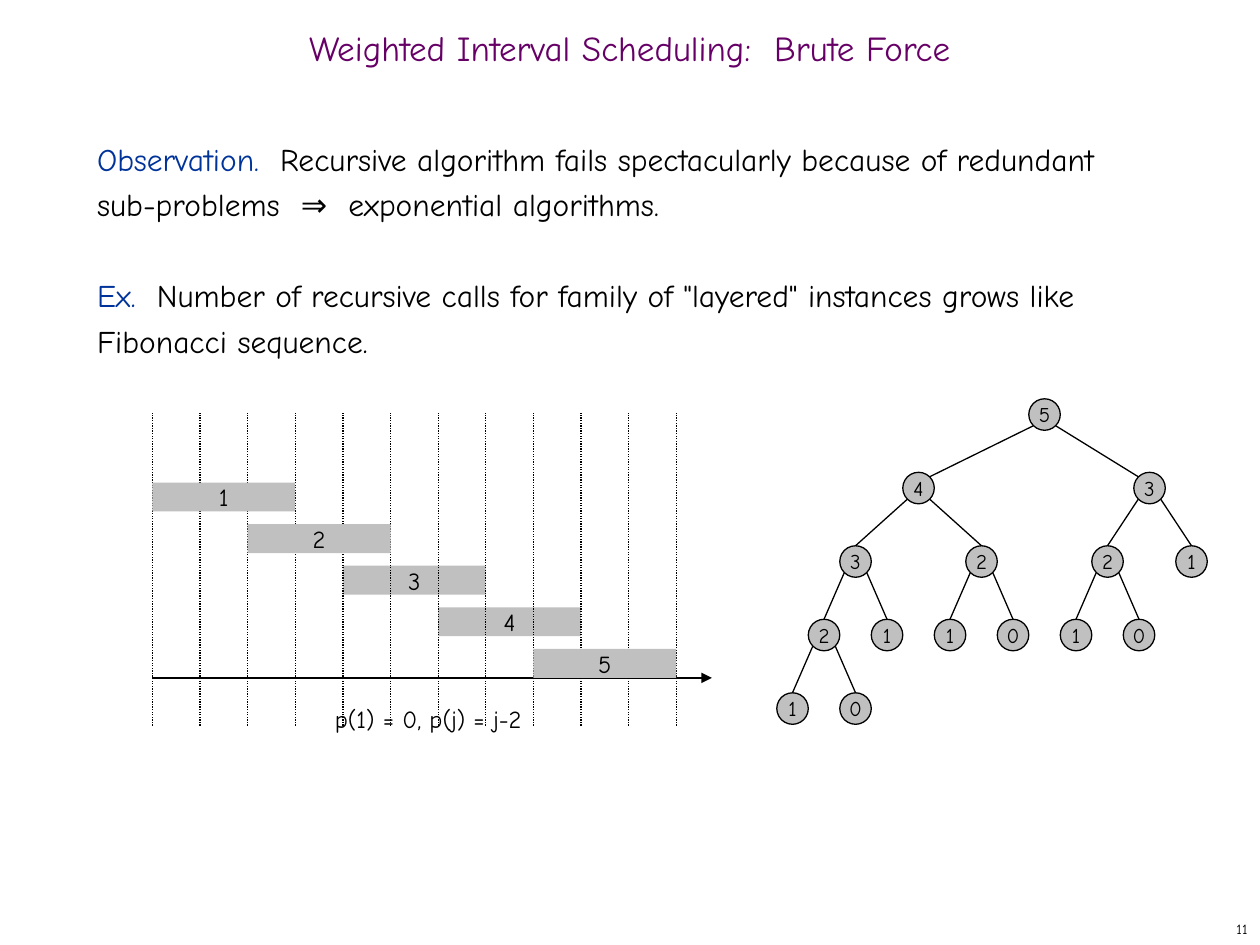
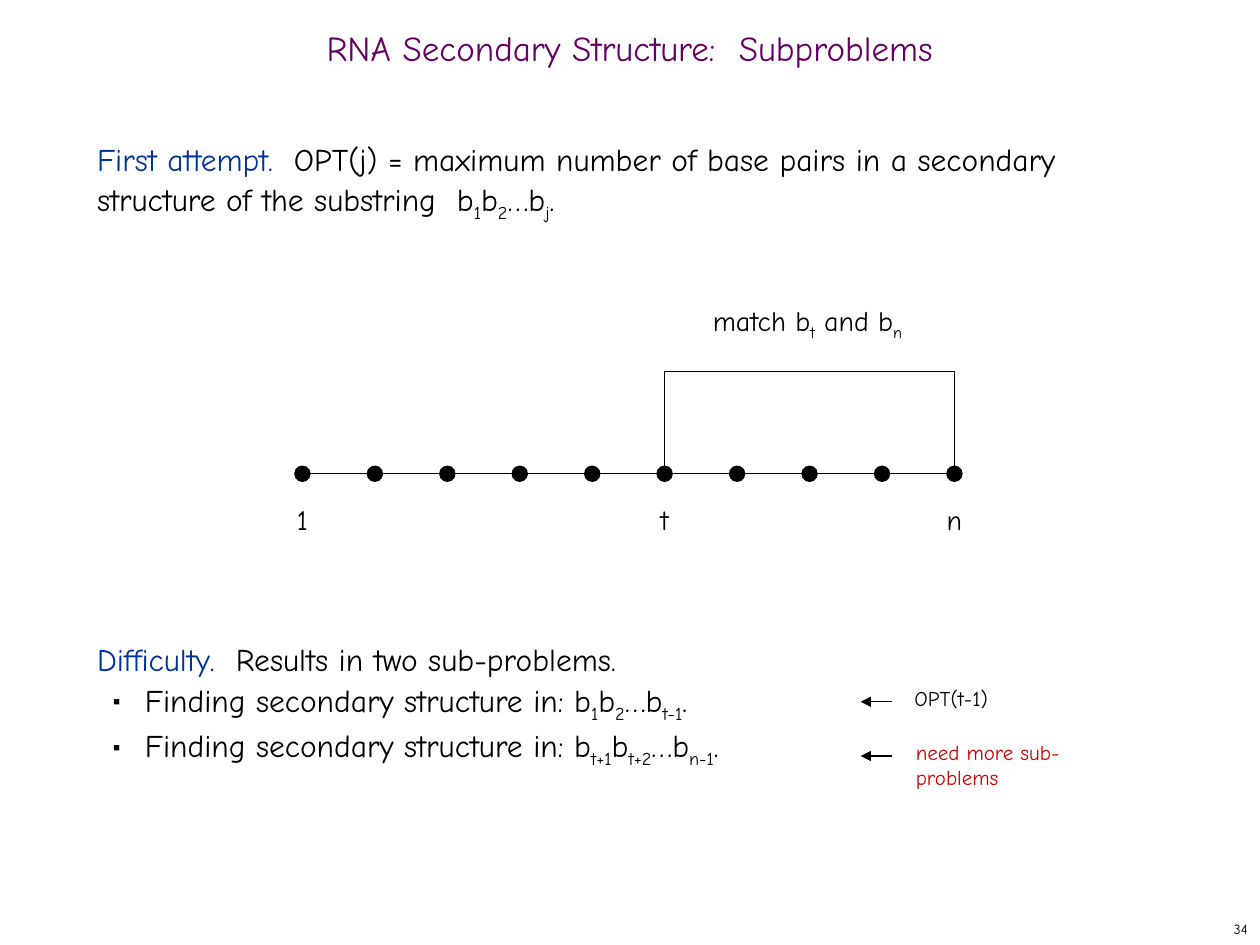
"""Build two lecture slides on dynamic programming."""
from lxml.etree import SubElement as Sub
from pptx import Presentation
from pptx.dml.color import RGBColor as RGB
from pptx.enum.dml import MSO_LINE as DASH
from pptx.enum.shapes import MSO_CONNECTOR as CXN, MSO_SHAPE as KIND
from pptx.enum.text import MSO_ANCHOR as ANCHOR, MSO_AUTO_SIZE as FIT, PP_ALIGN as ALIGN
from pptx.oxml.ns import qn
from pptx.util import Inches as In, Pt

FONT = "Comic Neue"
BLACK, BLUE, PLUM, RED, GRAY = "000000", "003399", "660066", "CC0000", "C0C0C0"
LEFT, MID, RIGHT = ALIGN.LEFT, ALIGN.CENTER, ALIGN.RIGHT
LEAD = 26
hue = RGB.from_string


def write(para, text, size, ink=BLACK, align=LEFT):
    """Add runs: a blue lead ends at a bar, and tildes enclose subscripts."""
    para.alignment = align
    lead, _, rest = text.rpartition("|")
    parts = [(lead, BLUE, False)]
    parts += [(part, ink, k % 2) for k, part in enumerate(rest.split("~"))]
    for part, tint, low in parts:
        if part:
            run = para.add_run()
            run.text = part
            run.font.name, run.font.size = FONT, Pt(size)
            run.font.color.rgb = hue(tint)
            if low:
                run.font._element.set("baseline", "-25000")


def link(page, x1, y1, x2, y2, dash=None, head=False):
    """Draw a thin black line, dotted or with an arrowhead if asked."""
    line = page.shapes.add_connector(CXN.STRAIGHT, In(x1), In(y1), In(x2), In(y2))
    line.line.color.rgb = hue(BLACK)
    line.line.width = Pt(0.75)
    if dash:
        line.line.dash_style = dash
    props = line._element.spPr
    if head:
        Sub(props.find(qn("a:ln")), qn("a:tailEnd"), type="triangle")
    Sub(props, qn("a:effectLst"))


deck = Presentation()
deck.slide_width, deck.slide_height = In(10), In(7.5)

# Each body line: text, blank lines of space above it, bullet or not
plan = [
    ("Weighted Interval Scheduling:  Brute Force", [
        ("Observation.  |Recursive algorithm fails spectacularly because of redundant "
         "sub-problems  ⇒  exponential algorithms.", 0, False),
        ("Ex.  |Number of recursive calls for family of \"layered\" instances grows like "
         "Fibonacci sequence.", 1, False)]),
    ("RNA Secondary Structure:  Subproblems", [
        ("First attempt.|  OPT(j) = maximum number of base pairs in a secondary "
         "structure of the substring  b~1~b~2~…b~j~.", 0, False),
        ("Difficulty.|  Results in two sub-problems.", 9, False),
        ("Finding secondary structure in: b~1~b~2~…b~t-1~.", 0, True),
        ("Finding secondary structure in: b~t+1~b~t+2~…b~n-1~.", 0, True)]),
]
for title, lines in plan:
    page = deck.slides.add_slide(deck.slide_layouts[1])
    head, body = page.placeholders
    head.left, head.top, head.width, head.height = In(0), In(0.17), In(10), In(0.5)
    body.left, body.top, body.width, body.height = In(0.67), In(1), In(8.58), In(5.92)
    for box, anchor in ((head, ANCHOR.MIDDLE), (body, ANCHOR.TOP)):
        box.text_frame.auto_size = FIT.NONE
        box.text_frame.vertical_anchor = anchor
    para = head.text_frame.paragraphs[0]
    para.line_spacing = 0.7
    write(para, title, 20, PLUM, MID)
    for k, (text, gap, dot) in enumerate(lines):
        para = body.text_frame.add_paragraph() if k else body.text_frame.paragraphs[0]
        para.line_spacing, para.space_before = Pt(LEAD), Pt(gap * LEAD)
        para.level = int(dot)
        props = para._p.get_or_add_pPr()
        props.set("marL", str(In(0.38) if dot else 0))
        props.set("indent", str(In(-0.25) if dot else 0))
        if dot:
            tint = Sub(props, qn("a:buClr"))
            Sub(tint, qn("a:srgbClr"), val=BLACK)
            Sub(props, qn("a:buSzPct"), val="35000")
            Sub(props, qn("a:buChar"), char="■")
        else:
            Sub(props, qn("a:buNone"))
        write(para, text, 18)
calls, chain = deck.slides

COL, X0, AXIS = 0.378, 1.21, 5.38
BAR, STEP = 0.23, 0.33
link(calls, X0, AXIS, 5.65, AXIS, head=True)
forms = []
for job in (3, 4, 5, 1, 2):
    if job == 5:
        for k in range(12):
            link(calls, X0 + k * COL, 5.76, X0 + k * COL, 3.28, DASH.ROUND_DOT)
    bar = calls.shapes.add_shape(KIND.RECTANGLE, In(X0 + 2 * (job - 1) * COL),
                                 In(3.83 + (job - 1) * STEP), In(3 * COL), In(BAR))
    bar.line.fill.background()
    forms.append((bar, str(job), 14, GRAY))

# Each node: label, column, row, parent's place in the list
tree = [("5", 24, 0, None), ("4", 12, 1, 0), ("3", 34, 1, 0), ("3", 6, 2, 1),
        ("2", 18, 2, 1), ("2", 30, 2, 2), ("1", 38, 2, 2), ("2", 3, 3, 3),
        ("1", 9, 3, 3), ("1", 15, 3, 4), ("0", 21, 3, 4), ("1", 27, 3, 5),
        ("0", 33, 3, 5), ("1", 0, 4, 7), ("0", 6, 4, 7)]
SIZE, DIAG = 0.25, 0.09
spots = [(6.29 + col / 12, 3.29 + row * 7 / 12) for _, col, row, _ in tree]
for (label, _, row, up), (x, y) in zip(tree, spots):
    node = calls.shapes.add_shape(KIND.OVAL, In(x - SIZE / 2), In(y - SIZE / 2),
                                  In(SIZE), In(SIZE))
    forms.append((node, label, 12, GRAY))
    if up is not None:
        px, py = spots[up]
        side = DIAG if x > px else -DIAG
        if row == 1:
            link(calls, px + side, py + DIAG, x - side, y - DIAG)
        else:
            link(calls, px + side, py + DIAG, x, y - SIZE / 2)

GAP, DOT, BASE = 0.575, 0.12, 3.76
stops = [2.4 + k * GAP for k in range(10)]
for k, x in enumerate(stops):
    bead = chain.shapes.add_shape(KIND.OVAL, In(x - DOT / 2), In(BASE - DOT / 2),
                                  In(DOT), In(DOT))
    forms.append((bead, "", 12, BLACK))
    if k:
        link(chain, stops[k - 1] + DOT / 2, BASE, x - DOT / 2, BASE)

start, end, low, high = In(stops[5]), In(stops[9]), In(BASE - DOT / 2), In(2.95)
path = chain.shapes.build_freeform(start, low)
path.add_line_segments([(start, high), (end, high), (end, low)], close=False)
arc = path.convert_to_shape()
arc.fill.background()
arc.line.color.rgb = hue(BLACK)
arc.line.width = Pt(0.75)
arc.shadow.inherit = False

for form, text, size, fill in forms:
    form.shadow.inherit = False
    form.fill.solid()
    form.fill.fore_color.rgb = hue(fill)
    if form.auto_shape_type == KIND.OVAL:
        form.line.color.rgb = hue(BLACK)
        form.line.width = Pt(0.75)
    if text:
        form.text_frame.word_wrap = False
        form.text_frame.vertical_anchor = ANCHOR.MIDDLE
        write(form.text_frame.paragraphs[0], text, size, align=MID)

for y in (5.57, 6):
    link(chain, 7.08, y, 6.83, y, head=True)

notes = [
    (calls, 2.56, 5.54, 1.8, 0.37, "p(1) = 0, p(j) = j-2", 14, BLACK, LEFT),
    (chain, 5.56, 2.36, 1.81, 0.41, "match b~t~ and b~n~", 16, BLACK, LEFT),
    (chain, 7.16, 5.39, 1, 0.34, "OPT(t-1)", 12, BLACK, LEFT),
    (chain, 7.17, 5.82, 1.5, 0.5, "need more sub-problems", 12, RED, LEFT),
    (calls, 7.92, 7.25, 2.08, 0.25, "11", 8, BLACK, RIGHT),
    (chain, 7.92, 7.25, 2.08, 0.25, "34", 8, BLACK, RIGHT),
]
notes += [(chain, stops[k] - 0.32, 3.94, 0.64, 0.37, text, 16, BLACK, MID)
          for k, text in ((0, "1"), (5, "t"), (9, "n"))]
for page, x, y, wide, tall, text, size, ink, align in notes:
    frame = page.shapes.add_textbox(In(x), In(y), In(wide), In(tall)).text_frame
    frame.word_wrap = True
    frame.vertical_anchor = ANCHOR.TOP if align == LEFT else ANCHOR.MIDDLE
    write(frame.paragraphs[0], text, size, ink, align)

deck.save("out.pptx")
